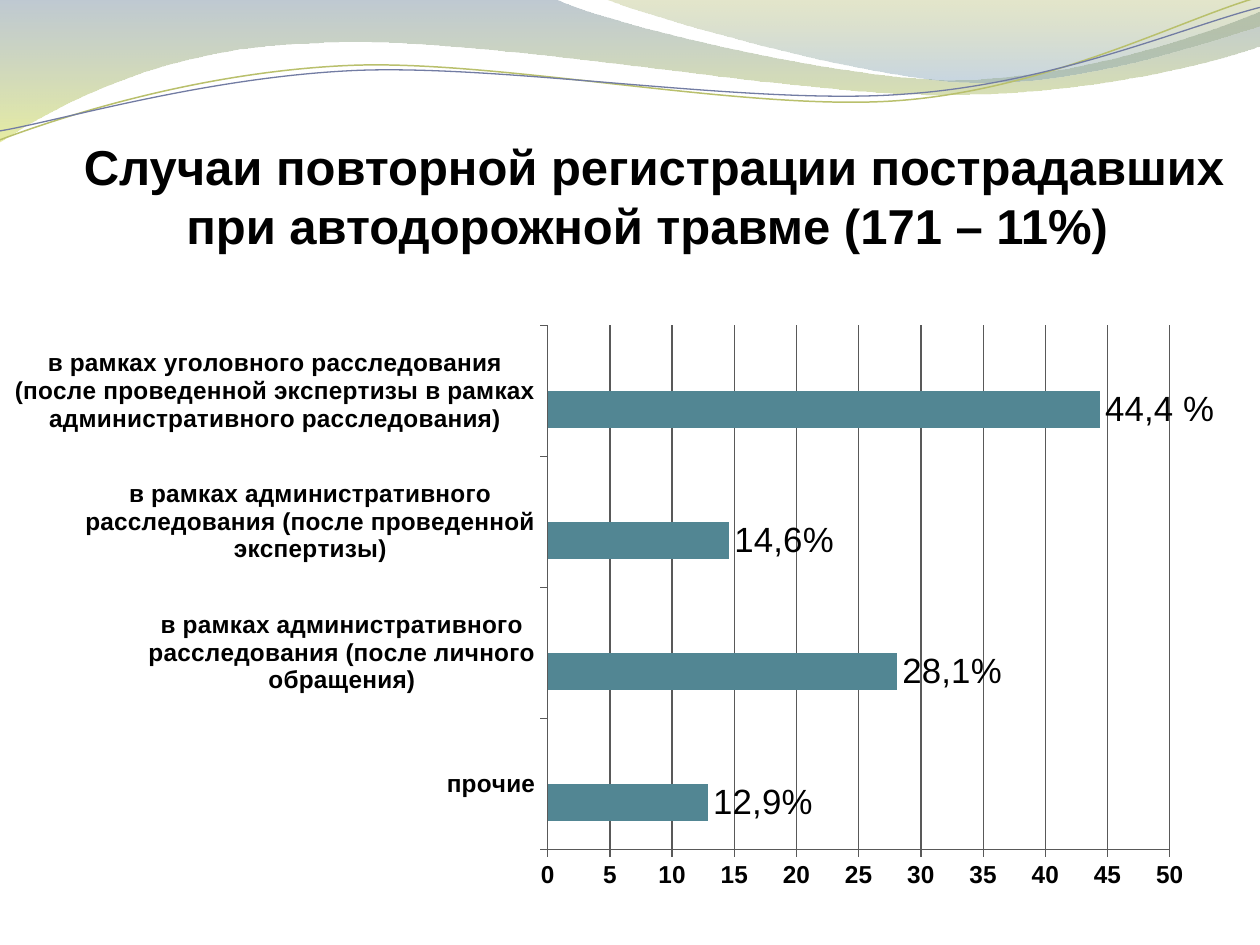
"""Build the slide on repeat registration of road-injury victims."""
from lxml import etree
from pptx import Presentation
from pptx import util as u
from pptx.chart.data import CategoryChartData
from pptx.dml.color import RGBColor
from pptx.enum import chart as ch, text
from pptx.oxml.ns import qn

BLACK = RGBColor(0x00, 0x00, 0x00)
GRID = RGBColor(0x59, 0x59, 0x59)
TEAL = RGBColor(0x52, 0x86, 0x93)
PALE_BLUE = RGBColor(0x9F, 0xB8, 0xCD)
SLATE = RGBColor(0x72, 0x88, 0x9B)
LIME = RGBColor(0xD3, 0xDE, 0x57)
OLIVE = RGBColor(0xA4, 0xAC, 0x50)
SKY = RGBColor(0x84, 0xA3, 0xBD)
OLIVE_LINE = RGBColor(0xB9, 0xC0, 0x6C)
INDIGO_LINE = RGBColor(0x72, 0x7C, 0xA3)

HEADING = "Случаи повторной регистрации пострадавших при автодорожной травме (171 – 11%) "
CASES = [
    ("прочие", 12.9, "12,9%"),
    ("в рамках административного расследования (после личного обращения)", 28.1, "28,1%"),
    ("в рамках административного расследования (после проведенной экспертизы)", 14.6, "14,6%"),
    ("в рамках уголовного расследования (после проведенной экспертизы "
     "в рамках административного расследования)", 44.4, "44,4 %"),
]
PLOT_AREA = {"x": 0.437, "y": 0.066, "w": 0.517, "h": 0.838}

LEFT_WAVE = [
    [(0, 0)], [(11.18, -0.03)],
    [(12.09, 0.43), (16.87, 1.6), (19.25, 1.6)],
    [(21.67, 1.6), (24.33, 0.66), (25.4, 0.23)], [(25.43, 0.91)],
    [(24.97, 1.12), (22.1, 1.93), (18.95, 1.91)],
    [(15.8, 1.91), (9.7, 0.71), (6.53, 0.86)],
    [(3.28, 0.91), (1.17, 2.11), (-0.03, 2.87)], [(0, 0)],
]
RIGHT_WAVE = [
    [(12.17, -0.03)],
    [(12.93, 0.28), (17.32, 1.57), (19.53, 1.65)],
    [(21.74, 1.75), (24.41, 0.81), (25.4, 0.53)], [(25.4, 0)], [(12.17, -0.03)],
]
OLIVE_CURVE = [
    [(0, 2.82)],
    [(1.22, 2.36), (4.01, 1.45), (7.04, 1.32)],
    [(10.03, 1.19), (15.06, 2.26), (18.11, 2.03)],
    [(21.16, 1.8), (23.83, 0.38), (25.35, -0.05)],
]
INDIGO_CURVE = [
    [(0, 2.64)],
    [(1.19, 2.44), (4.17, 1.55), (7.19, 1.42)],
    [(10.24, 1.3), (15.16, 2.13), (18.21, 1.9)],
    [(21.23, 1.7), (23.9, 0.53), (25.4, 0.15)],
]


def apply(target, values):
    """Set each attribute named in values on the target."""
    for name, value in values.items():
        setattr(target, name, value)


class SlideBuilder:
    """Hold the style and the current slide."""

    def __init__(self, deck):
        self.face = "Arial"
        self.slide = deck.slides.add_slide(deck.slide_layouts[5])

    def style(self, font, size, bold):
        apply(font, {"name": self.face, "size": u.Pt(size), "bold": bold})
        font.color.rgb = BLACK

    def outline(self, segments, close):
        start, *anchors = [(u.Cm(x), u.Cm(y)) for x, y in (part[-1] for part in segments)]
        builder = self.slide.shapes.build_freeform(*start)
        builder.add_line_segments(anchors, close=close)
        figure = builder.convert_to_shape()
        figure.shadow.inherit = False
        strokes = list(figure._element.spPr.iter(qn("a:lnTo")))
        for stroke, part in zip(strokes, segments[1:]):
            if len(part) == 3:
                self.bend(stroke, part, figure)
        return figure

    def bend(self, stroke, controls, figure):
        bezier = etree.Element(qn("a:cubicBezTo"))
        for x, y in controls:
            etree.SubElement(bezier, qn("a:pt"), x=str(u.Cm(x) - figure.left),
                             y=str(u.Cm(y) - figure.top))
        stroke.getparent().replace(stroke, bezier)

    def wave(self, segments, stops):
        figure = self.outline(segments, True)
        figure.line.fill.background()
        figure.fill.gradient()
        figure.fill.gradient_angle = 270
        for stop, (color, _) in zip(figure.fill.gradient_stops, stops):
            stop.color.rgb = color
        tints = figure._element.spPr.iter(qn("a:srgbClr"))
        for tint, (_, opacity) in zip(tints, stops):
            etree.SubElement(tint, qn("a:alpha"), val=str(opacity * 1000))

    def curve(self, segments, color, width):
        figure = self.outline(segments, False)
        figure.fill.background()
        figure.line.color.rgb = color
        figure.line.width = u.Pt(width)

    def title(self, wording, box):
        heading = self.slide.shapes.title
        apply(heading, box)
        frame = heading.text_frame
        frame.text = wording
        apply(frame, {"margin_left": 0, "margin_right": 0, "margin_top": u.Cm(0.13),
                      "margin_bottom": 0, "word_wrap": True,
                      "auto_size": text.MSO_AUTO_SIZE.NONE,
                      "vertical_anchor": text.MSO_ANCHOR.BOTTOM})
        paragraph = frame.paragraphs[0]
        paragraph.alignment = text.PP_ALIGN.CENTER
        self.style(paragraph.runs[0].font, 28, True)

    def bar_chart(self, cases, box):
        data = CategoryChartData()
        data.categories = [case for case, _, _ in cases]
        data.add_series("Series 1", [share for _, share, _ in cases])
        data.add_series("Series 2", [None] * len(cases))
        chart = self.slide.shapes.add_chart(
            ch.XL_CHART_TYPE.BAR_CLUSTERED, *box, data).chart
        apply(chart, {"has_legend": False, "has_title": False})
        self.style(chart.font, 14, True)
        bars = chart.plots[0]
        apply(bars, {"gap_width": 150, "overlap": 0, "vary_by_categories": False})
        for series, color in zip(bars.series, (TEAL, PALE_BLUE)):
            series.format.fill.solid()
            series.format.fill.fore_color.rgb = color
        self.axes(chart)
        self.labels(bars.series[0], [label for _, _, label in cases])
        self.place_plot(chart)

    def axes(self, chart):
        shares = chart.value_axis
        for axis in (chart.category_axis, shares):
            apply(axis, {"major_tick_mark": ch.XL_TICK_MARK.OUTSIDE,
                         "minor_tick_mark": ch.XL_TICK_MARK.NONE})
            axis.format.line.color.rgb = GRID
        apply(shares, {"minimum_scale": 0, "maximum_scale": 50, "major_unit": 5,
                       "has_major_gridlines": True})
        shares.major_gridlines.format.line.color.rgb = GRID

    def labels(self, series, wordings):
        labels = series.data_labels
        apply(labels, {"show_value": True, "number_format": "0.00%",
                       "number_format_is_linked": False,
                       "position": ch.XL_LABEL_POSITION.OUTSIDE_END})
        self.style(labels.font, 20, False)
        for index, wording in enumerate(wordings):
            label = series.points[index].data_label
            label.text_frame.text = wording
            label.position = ch.XL_LABEL_POSITION.OUTSIDE_END
            self.style(label.text_frame.paragraphs[0].runs[0].font, 20, False)

    def place_plot(self, chart):
        area = chart._chartSpace.chart.plotArea
        for old in area.findall(qn("c:layout")):
            area.remove(old)
        layout = etree.Element(qn("c:layout"))
        manual = etree.SubElement(layout, qn("c:manualLayout"))
        settings = {"layoutTarget": "inner", "xMode": "edge", "yMode": "edge", **PLOT_AREA}
        for tag, value in settings.items():
            etree.SubElement(manual, qn(f"c:{tag}"), val=str(value))
        area.insert(0, layout)


def main():
    """Assemble and save the deck."""
    deck = Presentation()
    apply(deck, {"slide_width": u.Cm(25.4), "slide_height": u.Cm(19.05)})
    page = SlideBuilder(deck)
    page.wave(LEFT_WAVE, [(SLATE, 45), (LIME, 55)])
    page.wave(RIGHT_WAVE, [(OLIVE, 30), (SKY, 45)])
    page.curve(OLIVE_CURVE, OLIVE_LINE, 0.85)
    page.curve(INDIGO_CURVE, INDIGO_LINE, 0.75)
    page.title(HEADING, {"left": u.Cm(1.27), "top": u.Cm(1.95),
                         "width": u.Cm(23.83), "height": u.Cm(3.18)})
    page.bar_chart(CASES, (u.Cm(0.3), u.Cm(5.73), u.Cm(24.4), u.Cm(12.6)))
    deck.save("out.pptx")


if __name__ == "__main__":
    main()
